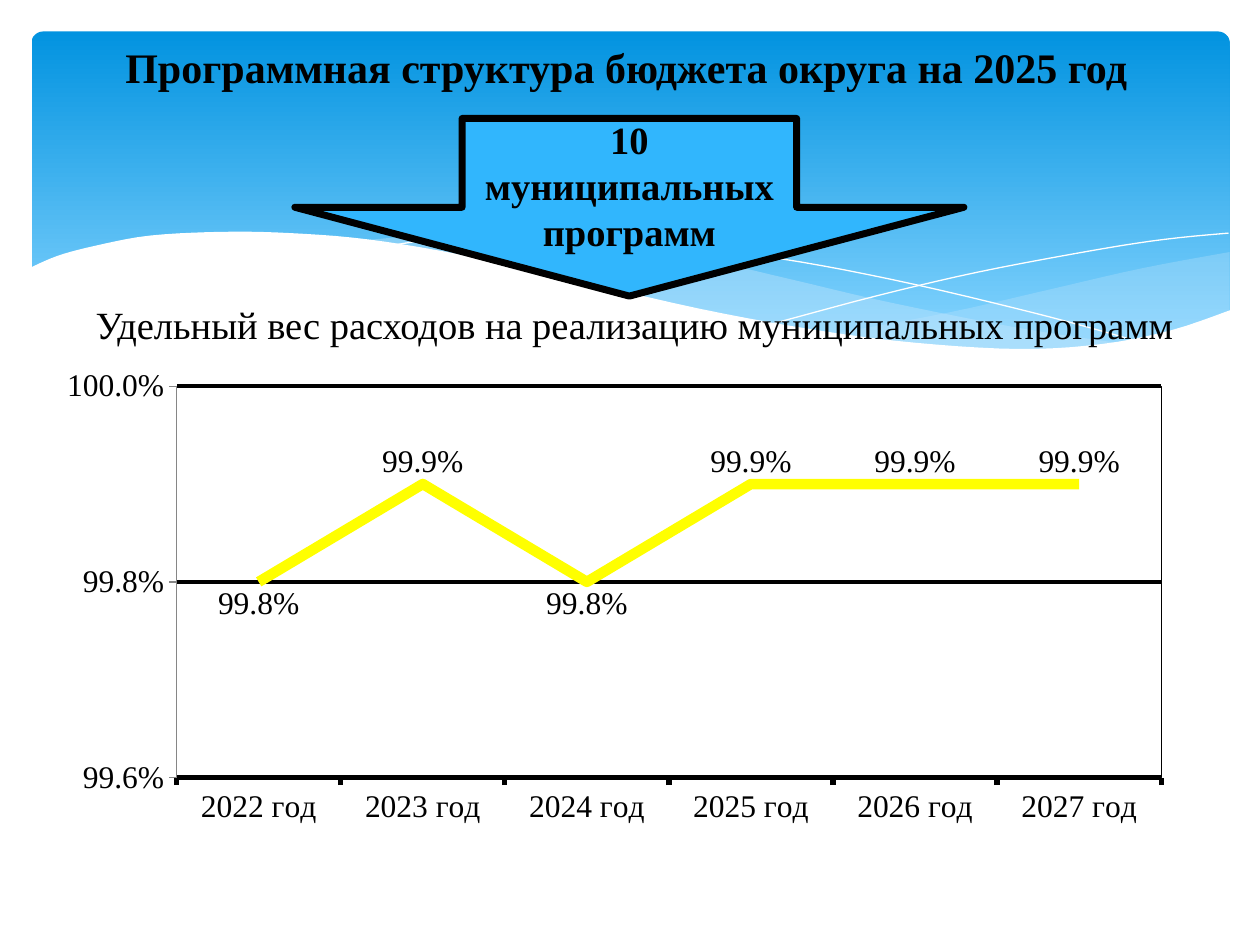
from lxml import etree
from pptx import Presentation
from pptx.chart.data import CategoryChartData
from pptx.dml.color import RGBColor
from pptx.enum.chart import XL_CHART_TYPE as ChartType
from pptx.enum.chart import XL_LABEL_POSITION as LabelPosition
from pptx.enum.chart import XL_MARKER_STYLE as Marker
from pptx.enum.chart import XL_TICK_MARK as Tick
from pptx.enum.shapes import MSO_SHAPE as Shape
from pptx.enum.text import MSO_ANCHOR as Anchor
from pptx.enum.text import PP_ALIGN as Align
from pptx.oxml import parse_xml
from pptx.oxml.ns import nsdecls, qn
from pptx.util import Inches, Pt

COLORS = {"black": "000000", "white": "FFFFFF", "sky_top": "0293E0",
          "sky_bottom": "83D3FE", "ribbon": "C6E7FC", "arrow": "31B6FD",
          "series": "FFFF00", "axis": "868686"}
FONT = "Times New Roman"


def color(name):
    return RGBColor.from_string(COLORS[name])


def smooth(points, steps=5):
    """Round off a row of points with a Catmull-Rom curve."""
    padded = [points[0], *points, points[-1]]
    curve = [points[0]]
    for a, b, c, d in zip(padded, padded[1:], padded[2:], padded[3:]):
        for step in range(1, steps + 1):
            t = step / steps
            curve.append(tuple(
                0.5 * (2 * q + (r - p) * t + (2 * p - 5 * q + 4 * r - s) * t ** 2
                       + (3 * q - p - 3 * r + s) * t ** 3)
                for p, q, r, s in zip(a, b, c, d)))
    return curve


class SlideBuilder:
    def __init__(self, slide):
        self.slide = slide
        self.shapes = slide.shapes

    def fill_text(self, frame, lines, size, bold=False, anchor=Anchor.TOP):
        frame.word_wrap = True
        frame.vertical_anchor = anchor
        for index, line in enumerate(lines):
            para = frame.add_paragraph() if index else frame.paragraphs[0]
            para.alignment = Align.CENTER
            span = para.add_run()
            span.text = line
            span.font.name, span.font.size, span.font.bold = FONT, Pt(size), bold
            span.font.color.rgb = color("black")

    def text(self, at, line, size, bold=False, top=0.05):
        box = self.shapes.add_textbox(*map(Inches, at))
        box.text_frame.margin_top = Inches(top)
        self.fill_text(box.text_frame, [line], size, bold)

    def shape(self, kind, at):
        shape = self.shapes.add_shape(kind, *map(Inches, at))
        shape.shadow.inherit = False
        return shape

    def sky(self, at):
        panel = self.shape(Shape.ROUNDED_RECTANGLE, at)
        panel.adjustments[0] = 0.034
        panel.line.fill.background()
        panel.fill.gradient()
        panel.fill.gradient_angle = 270
        stops = panel.fill.gradient_stops
        for stop, name, position in zip(stops, ("sky_top", "sky_bottom"), (0, 0.9)):
            stop.color.rgb, stop.position = color(name), position

    def arrow(self, at, lines):
        arrow = self.shape(Shape.DOWN_ARROW, at)
        arrow.fill.solid()
        arrow.fill.fore_color.rgb = color("arrow")
        arrow.line.color.rgb, arrow.line.width = color("black"), Pt(4)
        self.fill_text(arrow.text_frame, lines, 22, True, Anchor.MIDDLE)

    def outline(self, points, closed):
        points = [(Inches(x), Inches(y)) for x, y in points]
        builder = self.shapes.build_freeform(*points[0])
        builder.add_line_segments(points[1:], close=closed)
        shape = builder.convert_to_shape()
        shape.shadow.inherit = False
        return shape

    def wave(self, points, name, alpha=100):
        wave = self.outline(points, True)
        wave.line.fill.background()
        wave.fill.solid()
        wave.fill.fore_color.rgb = color(name)
        if alpha < 100:
            tone = wave.element.spPr.find(qn("a:solidFill")).find(qn("a:srgbClr"))
            etree.SubElement(tone, qn("a:alpha"), val=str(alpha * 1000))

    def hairline(self, points):
        curve = self.outline(smooth(points), False)
        curve.fill.background()
        curve.line.color.rgb, curve.line.width = color("white"), Pt(0)

    def line_chart(self, at, categories, values, below):
        data = CategoryChartData(number_format="0.0%")
        data.categories = categories
        data.add_series("Series 1", values)
        chart = self.shapes.add_chart(ChartType.LINE, *map(Inches, at), data).chart
        chart.has_legend = chart.has_title = False
        chart.font.name, chart.font.size = FONT, Pt(18)
        chart.font.color.rgb = color("black")

        # Axes
        value_axis, category_axis = chart.value_axis, chart.category_axis
        value_axis.minimum_scale, value_axis.maximum_scale = 0.996, 1
        value_axis.major_unit = 0.002
        value_axis.tick_labels.number_format = "0.0%"
        value_axis.tick_labels.number_format_is_linked = False
        for axis in (value_axis, category_axis):
            axis.major_tick_mark, axis.minor_tick_mark = Tick.OUTSIDE, Tick.NONE
        for line, name, width in ((value_axis.format.line, "axis", 0.75),
                                  (category_axis.format.line, "black", 3),
                                  (value_axis.major_gridlines.format.line, "black", 2.25)):
            line.color.rgb, line.width = color(name), Pt(width)

        # Series and labels
        plot = chart.plots[0]
        plot.vary_by_categories = False
        series = plot.series[0]
        series.smooth = False
        series.marker.style = Marker.NONE
        series.format.line.color.rgb = color("series")
        series.format.line.width = Pt(6)
        labels = series.data_labels
        labels.show_value = True
        labels.number_format, labels.number_format_is_linked = "0.0%", False
        labels.position = LabelPosition.ABOVE
        for index in below:
            series.points[index].data_label.position = LabelPosition.BELOW

        # Plot area: fixed place and thin frame
        area = chart.element.find(qn("c:chart")).find(qn("c:plotArea"))
        for old in area.findall(qn("c:layout")):
            area.remove(old)
        place = "".join(f'<c:{tag} val="{value}"/>' for tag, value in (
            ("layoutTarget", "inner"), ("xMode", "edge"), ("yMode", "edge"),
            ("x", 0.123), ("y", 0.038), ("w", 0.82), ("h", 0.674)))
        area.insert(0, parse_xml(f'<c:layout {nsdecls("c")}><c:manualLayout>{place}'
                                 '</c:manualLayout></c:layout>'))
        area.append(parse_xml(
            f'<c:spPr {nsdecls("c", "a")}><a:noFill/><a:ln w="9525"><a:solidFill>'
            f'<a:srgbClr val="{COLORS["black"]}"/></a:solidFill></a:ln></c:spPr>'))


def main():
    deck = Presentation()
    deck.slide_width, deck.slide_height = Inches(10), Inches(7.5)
    page = SlideBuilder(deck.slides.add_slide(deck.slide_layouts[6]))

    # Sky with waves
    page.sky((0.25, 0.25, 9.51, 2.7))
    right_top = [(9.76, 2), (9.06, 2.13), (8.32, 2.3), (7.53, 2.48), (6.61, 2.65)]
    right_bottom = [(6.61, 2.65), (7.19, 2.72), (7.81, 2.77), (8.35, 2.77),
                    (8.97, 2.7), (9.42, 2.59), (9.76, 2.47)]
    page.wave(smooth(right_top) + smooth(right_bottom), "ribbon", 29)
    middle_top = [(8.93, 2.73), (8.07, 2.6), (7.06, 2.4), (6.29, 2.22), (5.55, 2.05),
                  (4.89, 1.94), (4.2, 1.87), (3.61, 1.85), (2.86, 1.91)]
    middle_bottom = [(2.86, 1.91), (3.62, 2.03), (4.49, 2.22), (5.3, 2.4), (6.18, 2.58),
                     (6.95, 2.7), (7.61, 2.77), (8.28, 2.78), (8.93, 2.73)]
    page.wave(smooth(middle_top) + smooth(middle_bottom), "ribbon", 40)
    page.hairline([(3.09, 1.95), (3.53, 1.89), (4.16, 1.87), (4.89, 1.9), (5.56, 1.97),
                   (6.36, 2.08), (7.27, 2.26), (8.31, 2.51), (9.07, 2.72)])
    page.hairline([(6.13, 2.57), (6.95, 2.35), (7.76, 2.16), (8.66, 1.99),
                   (9.24, 1.9), (9.75, 1.85)])
    crest = [(9.77, 2.46), (9.3, 2.62), (8.75, 2.73), (8.09, 2.77), (7.26, 2.72),
             (6.48, 2.62), (5.55, 2.45), (4.47, 2.2), (3.65, 2.02), (2.92, 1.9),
             (2.3, 1.85), (1.77, 1.84), (1.19, 1.87), (0.76, 1.95), (0.46, 2.03),
             (0.23, 2.13)]
    page.wave(smooth(crest) + [(0.23, 3.29), (9.77, 3.29)], "white")

    # Heading, arrow and chart caption
    page.text((0.47, 0.23, 9, 0.94), "Программная структура бюджета округа на 2025 год",
              24, bold=True, top=0.1)
    page.arrow((2.34, 0.94, 5.31, 1.41), ["10", "муниципальных программ"])
    page.text((0.23, 2.34, 9.61, 0.47),
              "Удельный вес расходов на реализацию муниципальных программ", 22)

    # Share of spending by year
    page.line_chart((0.23, 2.89, 9.53, 4.61),
                    [f"{year} год" for year in range(2022, 2028)],
                    [0.998, 0.999, 0.998, 0.999, 0.999, 0.999], below=(0, 2))
    deck.save("out.pptx")


if __name__ == "__main__":
    main()
